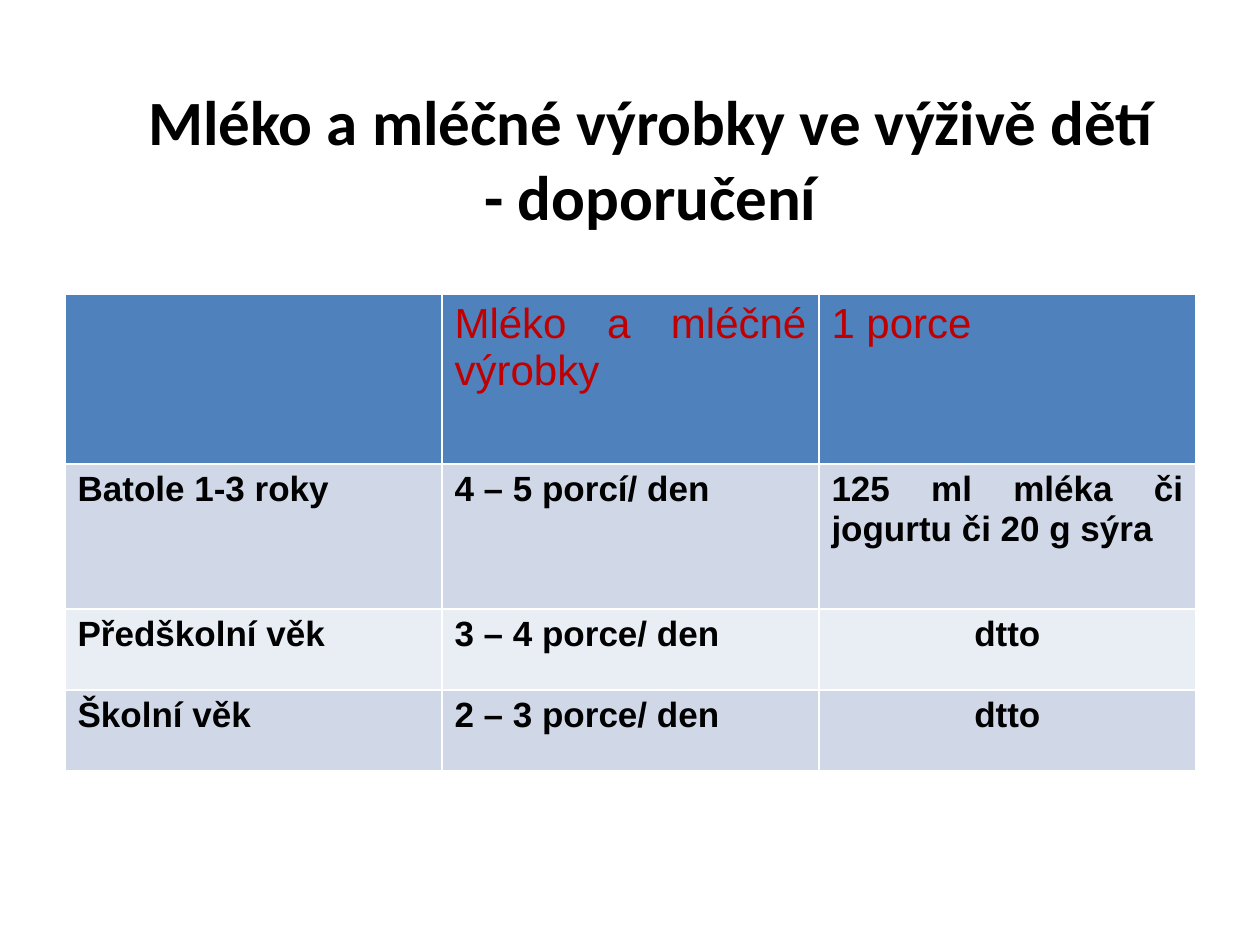
from pptx import Presentation
from pptx.dml.color import RGBColor
from pptx.enum.text import MSO_ANCHOR, MSO_AUTO_SIZE, PP_ALIGN
from pptx.util import Emu, Pt

CENTER, JUSTIFY = PP_ALIGN.CENTER, PP_ALIGN.JUSTIFY
TOP, NO_FIT = MSO_ANCHOR.TOP, MSO_AUTO_SIZE.NONE

# Content
HEADING = " Mléko a mléčné výrobky ve výživě dětí\v - doporučení"
PORTIONS = [
    ("", "Mléko a mléčné výrobky", "1 porce"),
    ("Batole 1-3 roky", "4 – 5 porcí/ den", "125 ml mléka či jogurtu či 20 g sýra"),
    ("Předškolní věk", "3 – 4 porce/ den", "dtto"),
    ("Školní věk", "2 – 3 porce/ den", "dtto"),
]

# Layout in px, 126 to the inch
SCALE = 914400 // 126
SLIDE = (1260, 945)
HEADING_BOX = dict(left=24, top=76, width=1239, height=158)
TABLE_LEFT, TABLE_TOP, COLUMN_WIDTH = 65, 294, 377
ROW_HEIGHTS = [170, 145, 81, 81]

COLORS = {"black": "000000", "red": "C00000", "header": "4F81BD",
          "odd": "D0D8E8", "even": "E9EDF4"}
HEADING_FONT = dict(name="Calibri", size=Pt(36), bold=True)
HEADER_FONT = dict(name="Arial", size=Pt(24), bold=False)
BODY_FONT = dict(name="Arial", size=Pt(20), bold=True)


def px(length):
    return Emu(length * SCALE)


def color(key):
    return RGBColor.from_string(COLORS[key])


def format_font(font, values, color_key):
    for attribute, value in values.items():
        setattr(font, attribute, value)
    font.color.rgb = color(color_key)


prs = Presentation()
prs.slide_width, prs.slide_height = map(px, SLIDE)
slide = prs.slides.add_slide(prs.slide_layouts[5])

# Heading
heading = slide.shapes.title
for side, length in HEADING_BOX.items():
    setattr(heading, side, px(length))
heading_frame = heading.text_frame
heading_frame.text = HEADING
heading_frame.auto_size = NO_FIT
heading_frame.vertical_anchor = TOP
heading_line = heading_frame.paragraphs[0]
heading_line.alignment = CENTER
for run in heading_line.runs:
    format_font(run.font, HEADING_FONT, "black")

# Portions table
columns = len(PORTIONS[0])
portions = slide.shapes.add_table(
    len(PORTIONS), columns, px(TABLE_LEFT), px(TABLE_TOP),
    px(COLUMN_WIDTH * columns), px(sum(ROW_HEIGHTS))).table
for column in portions.columns:
    column.width = px(COLUMN_WIDTH)

for r, (entries, height) in enumerate(zip(PORTIONS, ROW_HEIGHTS)):
    portions.rows[r].height = px(height)
    fill_key = "header" if r == 0 else "odd" if r % 2 else "even"
    for c, entry in enumerate(entries):
        cell = portions.cell(r, c)
        cell.fill.solid()
        cell.fill.fore_color.rgb = color(fill_key)
        if not entry:
            continue
        cell.text = entry
        paragraph = cell.text_frame.paragraphs[0]
        paragraph.alignment = CENTER if entry == "dtto" else JUSTIFY
        font_values, text_key = (BODY_FONT, "black") if r else (HEADER_FONT, "red")
        format_font(paragraph.runs[0].font, font_values, text_key)

prs.save("out.pptx")
